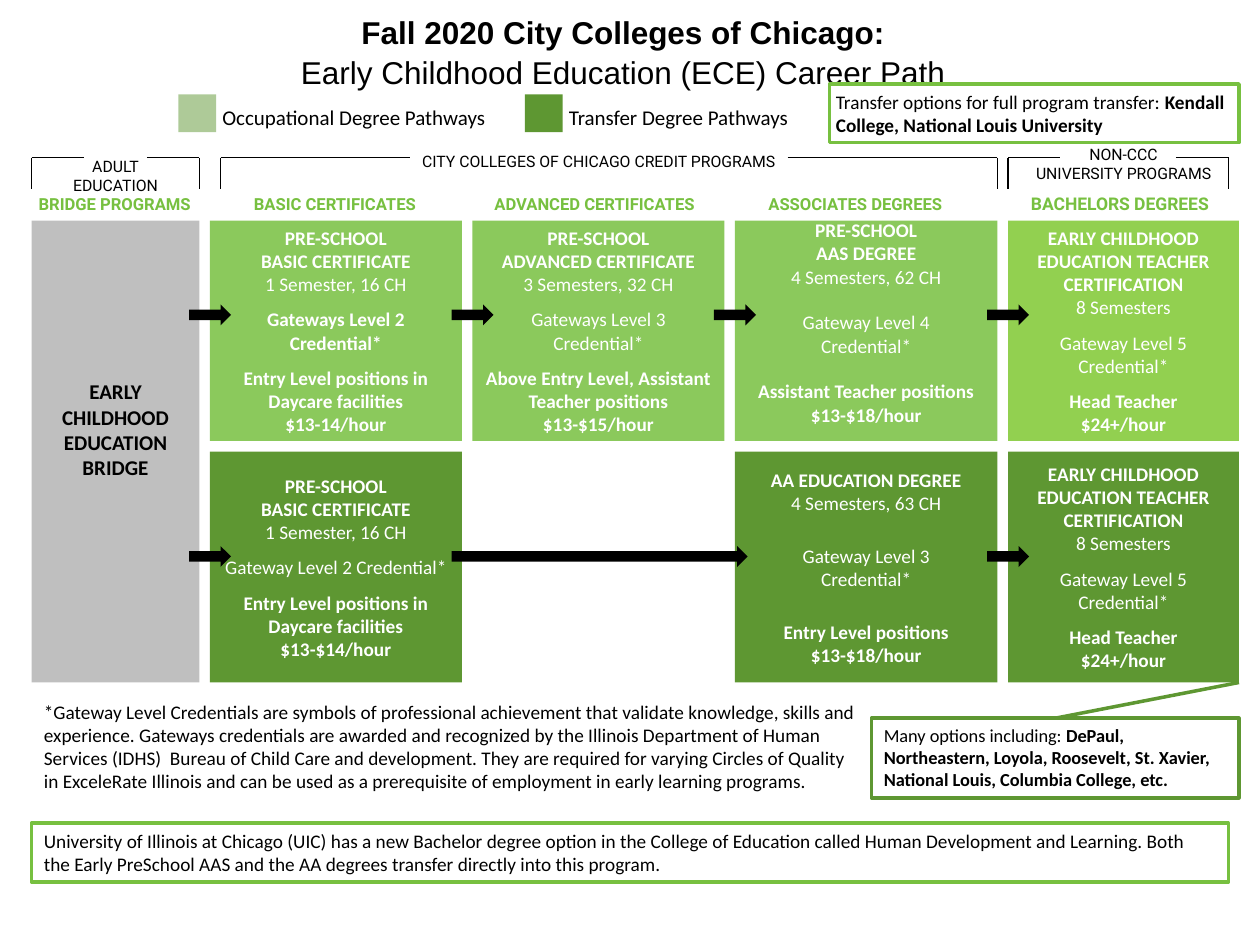
from dataclasses import dataclass

import lxml.etree
import pptx
import pptx.dml.color
import pptx.enum.shapes
import pptx.enum.text
import pptx.oxml.ns
import pptx.util

PX = 7620
SHAPE = pptx.enum.shapes.MSO_SHAPE
ALIGN = pptx.enum.text.PP_ALIGN
ANCHOR = pptx.enum.text.MSO_ANCHOR
qn = pptx.oxml.ns.qn


@dataclass(frozen=True)
class Theme:
    body: str = "Calibri"
    label: str = "Roboto"
    heading: str = "Arial"
    black: str = "000000"
    white: str = "FFFFFF"
    grey: str = "BFBFBF"
    green: str = "77C040"
    dark: str = "5E9732"
    lime: str = "92D050"
    title: float = 18
    large: float = 12
    text: float = 11
    callout: float = 10.5
    column: float = 9.5
    small: float = 9


T = Theme()


@dataclass(frozen=True)
class Card:
    head: tuple
    term: str
    level: tuple
    job: tuple
    level_bold: bool = False
    gap: int = 7


def px(*values):
    return [pptx.util.Emu(v * PX) for v in values]


def rgb(color):
    return pptx.dml.color.RGBColor.from_string(color)


def put(tf, text, same=False, size=T.text, font=T.body, color=T.black,
        bold=False, align=ALIGN.LEFT, before=0, spacing=1.0):
    p = tf.paragraphs[-1]
    if p.runs and not same:
        p = tf.add_paragraph()
    p.alignment, p.line_spacing = align, spacing
    p.space_before = pptx.util.Pt(before)
    r = p.add_run()
    r.text = text
    r.font.size, r.font.name, r.font.bold = pptx.util.Pt(size), font, bold
    r.font.color.rgb = rgb(color)


def frame(sp, anchor=ANCHOR.TOP, insets=(12, 6, 12, 6), wrap=True):
    tf = sp.text_frame
    tf.word_wrap, tf.vertical_anchor = wrap, anchor
    tf.auto_size = pptx.enum.text.MSO_AUTO_SIZE.NONE
    tf.margin_left, tf.margin_top, tf.margin_right, tf.margin_bottom = px(*insets)
    return tf


def textbox(s, box, **kwargs):
    return frame(s.shapes.add_textbox(*px(*box)), **kwargs)


def block(s, box, fill=None, alpha=None, line=None, kind=SHAPE.RECTANGLE):
    sp = s.shapes.add_shape(kind, *px(*box))
    sp.shadow.inherit = False
    if fill:
        sp.fill.solid()
        sp.fill.fore_color.rgb = rgb(fill)
    else:
        sp.fill.background()
    if alpha:
        clr = sp.fill._xPr.find(qn("a:solidFill"))[0]
        lxml.etree.SubElement(clr, qn("a:alpha")).set("val", str(alpha * 1000))
    if line:
        sp.line.color.rgb, sp.line.width = rgb(line), pptx.util.Pt(2)
    else:
        sp.line.fill.background()
    return sp


def connect(s, x1, y1, x2, y2, color=T.black, width=0.75):
    cx = s.shapes.add_connector(pptx.enum.shapes.MSO_CONNECTOR.STRAIGHT,
                                *px(x1, y1, x2, y2))
    cx.line.color.rgb, cx.line.width = rgb(color), pptx.util.Pt(width)
    lxml.etree.SubElement(cx._element.spPr, qn("a:effectLst"))
    return cx


def title(s, box):
    sp = s.shapes.title
    sp.left, sp.top, sp.width, sp.height = px(*box)
    tf = frame(sp, insets=(0, 0, 0, 0))
    for text, bold in (("Fall 2020 City Colleges of Chicago:", True),
                       ("Early Childhood Education (ECE) Career Path", False)):
        put(tf, text, size=T.title, font=T.heading, bold=bold,
            align=ALIGN.CENTER, spacing=1.06)


def legend(s, x, y, text, alpha=None):
    block(s, (x, y, 36, 36), T.dark, alpha)
    put(textbox(s, (x + 30, y + 4, 300, 36)), text, size=T.large)


def bracket(s, box, gap, label_box, lines):
    x, y, w, h = box
    left, right = x + gap[0], x + gap[1]
    connect(s, x, y, left, y)
    connect(s, right, y, x + w, y)
    for side in (x, x + w):
        connect(s, side, y, side, y + h)
    dx, dy, lw, lh = label_box
    tf = textbox(s, (x + dx, y + dy, lw, lh))
    for text in lines:
        put(tf, text, size=T.small, font=T.label, align=ALIGN.CENTER)


def column_heading(s, x, y, text, size=T.column):
    tf = textbox(s, (x, y, 210, 32), wrap=False)
    put(tf, text, size=size, font=T.label, color=T.green, bold=True)


def card(s, box, data, fill, alpha=None, bottom=6):
    tf = frame(block(s, box, fill, alpha), ANCHOR.MIDDLE, (12, 6, 12, bottom))
    groups = ((data.head, True, 0), ((data.term,), False, 0),
              (data.level, data.level_bold, data.gap), (data.job, True, data.gap))
    for lines, bold, gap in groups:
        for i, text in enumerate(lines):
            put(tf, text, color=T.white, bold=bold, align=ALIGN.CENTER,
                before=0 if i else gap)


def bridge(s, box):
    tf = frame(block(s, box, T.grey), ANCHOR.MIDDLE, (12, 6, 12, 48))
    put(tf, "EARLY CHILDHOOD EDUCATION BRIDGE", size=T.large, bold=True,
        align=ALIGN.CENTER)


def arrows(s, y, spans):
    for x, w in spans:
        block(s, (x, y, w, 20), T.black, kind=SHAPE.RIGHT_ARROW)


def note(s, box, runs, line, size=T.text, inset=12):
    sp = block(s, box, line=line)
    tf = frame(sp, insets=(inset, 6, inset, 6))
    for text, bold in runs:
        put(tf, text, same=True, size=size, bold=bold)
    return sp


def main():
    prs = pptx.Presentation()
    prs.slide_width, prs.slide_height = px(1200, 900)
    s = prs.slides.add_slide(prs.slide_layouts[5])

    title(s, (20, 10, 1147, 73))
    legend(s, 170, 90, "Occupational Degree Pathways", alpha=50)
    legend(s, 500, 90, "Transfer Degree Pathways")
    note(s, (790, 80, 390, 56),
         (("Transfer options for full program transfer: ", False),
          ("Kendall College, National Louis University", True)), T.green, inset=6)

    bracket(s, (30, 150, 160, 30), (50, 110), (-30, -7, 220, 48), ("ADULT", "EDUCATION"))
    bracket(s, (210, 150, 740, 30), (180, 540), (100, -11, 520, 32),
            ("CITY COLLEGES OF CHICAGO CREDIT PROGRAMS",))
    bracket(s, (960, 150, 210, 30), (50, 160), (10, -18, 200, 48),
            ("NON-CCC", "UNIVERSITY PROGRAMS"))
    for x, text in ((25, "BRIDGE PROGRAMS"), (230, "BASIC CERTIFICATES"),
                    (459, "ADVANCED CERTIFICATES"), (720, "ASSOCIATES DEGREES")):
        column_heading(s, x, 179, text)
    column_heading(s, 970, 178, "BACHELORS DEGREES", size=10)

    basic_head = ("PRE-SCHOOL", "BASIC CERTIFICATE")
    entry = "Entry Level positions in Daycare facilities"
    bachelor = Card(("EARLY CHILDHOOD EDUCATION TEACHER CERTIFICATION",), "8 Semesters",
                    ("Gateway Level 5", "Credential*"), ("Head Teacher", "$24+/hour"))
    bridge(s, (30, 210, 160, 440))
    card(s, (200, 210, 240, 210),
         Card(basic_head, "1 Semester, 16 CH", ("Gateways Level 2 Credential*",),
              (entry, "$13-14/hour"), level_bold=True), T.green, 85)
    card(s, (450, 210, 240, 210),
         Card(("PRE-SCHOOL", "ADVANCED CERTIFICATE"), "3 Semesters, 32 CH",
              ("Gateways Level 3 Credential*",),
              ("Above Entry Level, Assistant Teacher positions", "$13-$15/hour")),
         T.green, 85)
    card(s, (700, 210, 250, 210),
         Card(("PRE-SCHOOL", "AAS DEGREE"), "4 Semesters, 62 CH",
              ("Gateway Level 4", "Credential*"),
              ("Assistant Teacher positions", "$13-$18/hour"), gap=13),
         T.green, 85, bottom=22)
    card(s, (960, 210, 220, 210), bachelor, T.lime)
    card(s, (200, 430, 240, 220),
         Card(basic_head, "1 Semester, 16 CH", ("Gateway Level 2 Credential*",),
              (entry, "$13-$14/hour")), T.dark)
    card(s, (700, 430, 250, 220),
         Card(("AA EDUCATION DEGREE",), "4 Semesters, 63 CH",
              ("Gateway Level 3", "Credential*"),
              ("Entry Level positions", "$13-$18/hour"), gap=17), T.dark)
    card(s, (960, 430, 220, 220), bachelor, T.dark)
    arrows(s, 290, ((180, 40), (430, 40), (680, 40), (940, 40)))
    arrows(s, 520, ((180, 40), (430, 282), (940, 40)))

    put(textbox(s, (30, 661, 800, 119)),
        "*Gateway Level Credentials are symbols of professional achievement that validate "
        "knowledge, skills and experience. Gateways credentials are awarded and recognized "
        "by the Illinois Department of Human Services (IDHS)  Bureau of Child Care and "
        "development. They are required for varying Circles of Quality in ExceleRate "
        "Illinois and can be used as a prerequisite of employment in early learning programs.")
    options = note(s, (830, 684, 350, 76),
                   (("Many options including: ", False),
                    ("DePaul, Northeastern, Loyola, Roosevelt, St. Xavier, "
                     "National Louis, Columbia College, etc.", True)),
                   T.dark, size=T.callout)
    connect(s, 1005, 684, 1180, 650, T.dark, 2).begin_connect(options, 0)
    note(s, (30, 784, 1140, 56),
         (("University of Illinois at Chicago (UIC) has a new Bachelor degree option in the "
           "College of Education called Human Development and Learning. Both the Early "
           "PreSchool AAS and the AA degrees transfer directly into this program.", False),),
         T.green)
    prs.save("out.pptx")


if __name__ == "__main__":
    main()
